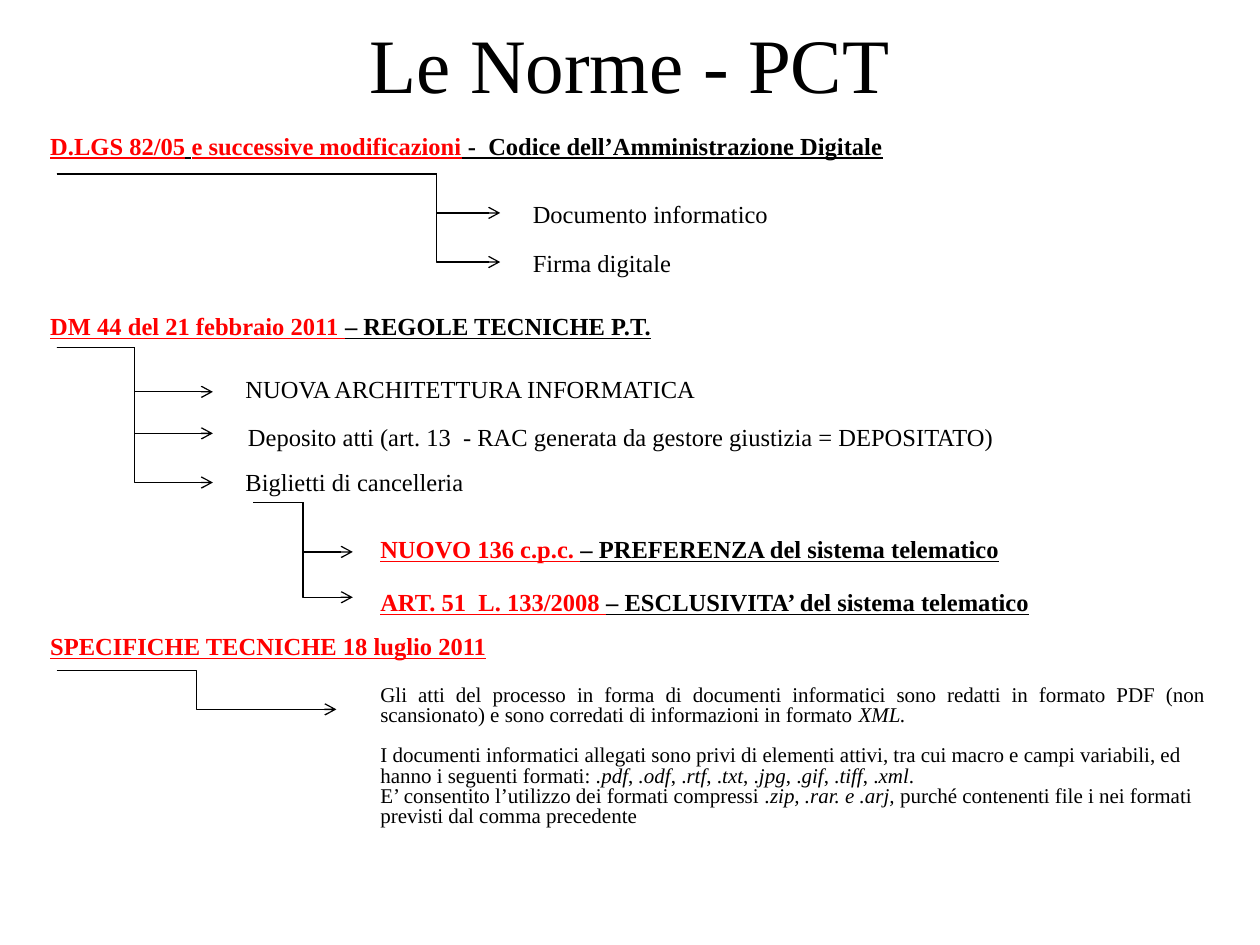
"""Build the slide on the rules of the telematic civil process."""
from lxml import etree
from pptx import Presentation
from pptx.dml.color import RGBColor
from pptx.enum.shapes import MSO_CONNECTOR
from pptx.enum.text import MSO_ANCHOR, MSO_AUTO_SIZE, PP_ALIGN
from pptx.oxml.ns import qn
from pptx.util import Inches, Pt

ELBOW = MSO_CONNECTOR.ELBOW
MIDDLE = MSO_ANCHOR.MIDDLE
GROW = MSO_AUTO_SIZE.SHAPE_TO_FIT_TEXT
CENTER, JUSTIFY, LEFT = PP_ALIGN.CENTER, PP_ALIGN.JUSTIFY, PP_ALIGN.LEFT
COLORS = {"law": "FF0000", "text": "000000"}
FONT = "Times New Roman"


def add_span(para, text, size, color="text"):
    span = para.add_run()
    span.text = text
    span.font.name = FONT
    span.font.size = Pt(size)
    span.font.color.rgb = RGBColor.from_string(COLORS[color])
    return span


def add_box(left, top, width, height):
    box = page.shapes.add_textbox(Inches(left), Inches(top), Inches(width), Inches(height))
    box.text_frame.word_wrap = True
    box.text_frame.auto_size = GROW
    return box.text_frame


deck = Presentation()
deck.slide_width, deck.slide_height = Inches(10), Inches(7.5)
page = deck.slides.add_slide(deck.slide_layouts[5])

title = page.shapes.title
title.left, title.top = Inches(0), Inches(0)
title.width, title.height = Inches(10), Inches(0.99)
title.text_frame.vertical_anchor = MIDDLE
title_para = title.text_frame.paragraphs[0]
title_para.alignment = CENTER
add_span(title_para, "Le Norme - PCT", 44)

headings = [
    (0.3, 0.99, 9.21, ["D.LGS 82/05", " ", "e successive modificazioni",
                       " -  Codice dell’Amministrazione Digitale"]),
    (0.3, 2.42, 9.21, ["DM 44 del 21 febbraio 2011 ", "– REGOLE TECNICHE P.T."]),
    (2.92, 4.19, 5.36, ["NUOVO 136 c.p.c. ", "– PREFERENZA del sistema telematico"]),
    (2.92, 4.61, 5.36, ["ART. 51  L. 133/2008 ", "– ESCLUSIVITA’ del sistema telematico"]),
    (0.3, 4.96, 9.21, ["SPECIFICHE TECNICHE 18 luglio 2011"]),
]
for left, top, width, parts in headings:
    para = add_box(left, top, width, 0.34).paragraphs[0]
    for index, text in enumerate(parts):
        span = add_span(para, text, 14, "text" if index % 2 else "law")
        span.font.bold = True
        span.font.underline = True

topics = [
    (4.13, 1.53, 2.81, "Documento informatico"),
    (4.13, 1.92, 2.81, "Firma digitale"),
    (1.85, 2.92, 3.94, "NUOVA ARCHITETTURA INFORMATICA"),
    (1.87, 3.3, 7.77, "Deposito atti (art. 13  - RAC generata da gestore giustizia = DEPOSITATO)"),
    (1.85, 3.66, 3.06, "Biglietti di cancelleria"),
]
for left, top, width, text in topics:
    add_span(add_box(left, top, width, 0.34).paragraphs[0], text, 14)

branches = [
    (0.45, 1.38, 3.97, [1.69, 2.08], 85700),
    (0.45, 2.76, 1.69, [3.11, 3.44, 3.83], 50000),
    (2.01, 3.99, 2.8, [4.38, 4.74], 50000),
    (0.45, 5.32, 2.67, [5.63], 50000),
]
for left, top, right, ends, bend in branches:
    for end in ends:
        arrow = page.shapes.add_connector(
            ELBOW, Inches(left), Inches(top), Inches(right), Inches(end))
        arrow.line.width = Pt(0.75)
        arrow.line.color.rgb = RGBColor.from_string(COLORS["text"])
        properties = arrow._element.spPr
        guides = properties.find(qn("a:prstGeom")).find(qn("a:avLst"))
        etree.SubElement(guides, qn("a:gd"), name="adj1", fmla=f"val {bend}")
        etree.SubElement(properties.find(qn("a:ln")), qn("a:tailEnd"), type="arrow")
        etree.SubElement(properties, qn("a:effectLst"))

details = [
    (JUSTIFY, 0, ["Gli atti del processo in forma di documenti informatici sono redatti in "
                  "formato PDF (non scansionato) e sono corredati di informazioni in formato ",
                  "XML."]),
    (LEFT, 11.4, ["I documenti informatici allegati sono privi di elementi attivi, tra cui macro "
                  "e campi variabili, ed hanno i seguenti formati: .", "pdf", ", ", ".odf",
                  ", .", "rtf", ", .", "txt", ", .", "jpg", ", .", "gif", ", .", "tiff",
                  ", .", "xml", "."]),
    (LEFT, 0, ["E’ consentito l’utilizzo dei formati compressi ", ".zip, .rar. e .arj, ",
               "purché contenenti file i nei formati previsti dal comma precedente"]),
]
frame = add_box(2.92, 5.4, 6.75, 1.22)
for number, (alignment, gap, parts) in enumerate(details):
    para = frame.add_paragraph() if number else frame.paragraphs[0]
    para.alignment = alignment
    para.line_spacing = 0.8
    para.space_before = Pt(gap)
    for index, text in enumerate(parts):
        add_span(para, text, 12).font.italic = index % 2 == 1

deck.save("out.pptx")
